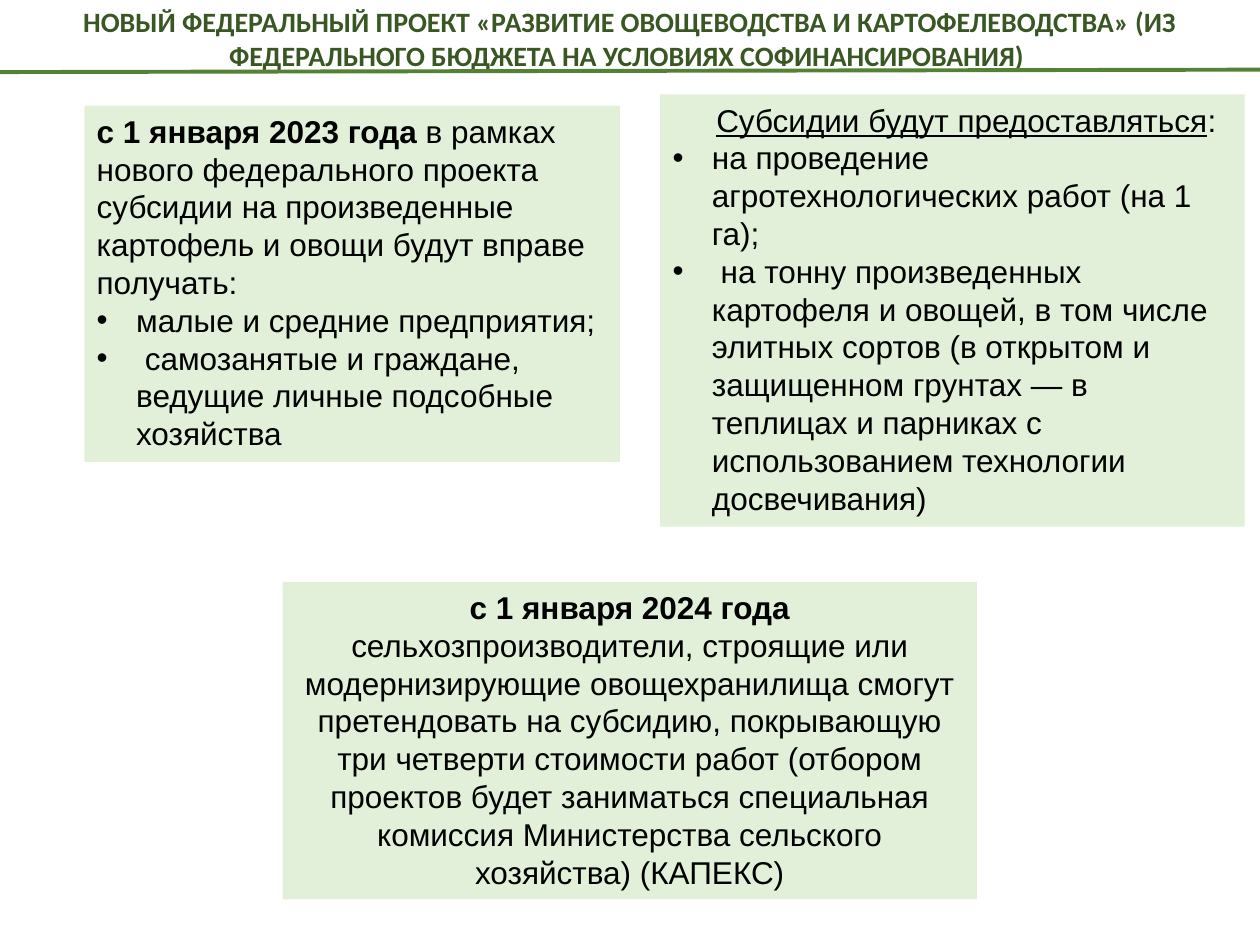
import pptx
import pptx.util
import pptx.dml.color
import pptx.enum.shapes
import pptx.enum.text
from lxml import etree

Pt = pptx.util.Pt
ALIGN = pptx.enum.text.PP_ALIGN
ANCHOR = pptx.enum.text.MSO_ANCHOR
COLORS = {"title": "385723", "rule": "548235", "panel": "E2F0D9", "text": "000000"}
HANG = 22.5


def color(name):
    return pptx.dml.color.RGBColor.from_string(COLORS[name])


def add_run(para, text, bold=False, under=False, size=18, face="Arial", tint="text"):
    run = para.add_run()
    run.text = text
    font = run.font
    font.name, font.size = face, Pt(size)
    font.bold, font.underline = bold, under
    font.color.rgb = color(tint)


def set_indent(para, left, first=0):
    props = para._p.get_or_add_pPr()
    props.set("marL", str(Pt(left)))
    props.set("indent", str(Pt(first)))
    return props


def add_bullet(frame, text):
    para = frame.add_paragraph()
    para.alignment = ALIGN.LEFT
    props = set_indent(para, HANG, -HANG)
    ns = pptx.oxml.ns.qn
    etree.SubElement(props, ns("a:buFont")).set("typeface", "Arial")
    etree.SubElement(props, ns("a:buChar")).set("char", "•")
    add_run(para, text)


def add_title(slide, text):
    box = slide.shapes.add_textbox(Pt(8), Pt(-1), Pt(704), Pt(46))
    frame = box.text_frame
    frame.word_wrap = True
    frame.vertical_anchor = ANCHOR.MIDDLE
    para = frame.paragraphs[0]
    para.alignment = ALIGN.CENTER
    add_run(para, text, bold=True, size=16, face="Calibri", tint="title")


def add_rule(slide):
    kind = pptx.enum.shapes.MSO_CONNECTOR.STRAIGHT
    rule = slide.shapes.add_connector(kind, Pt(720), Pt(39.8), Pt(0), Pt(41.2))
    rule.line.color.rgb = color("rule")
    rule.line.width = Pt(2.25)
    etree.SubElement(rule._element.spPr, pptx.oxml.ns.qn("a:effectLst"))


def add_panel(slide, left, top, width, height, align=ALIGN.LEFT):
    kind = pptx.enum.shapes.MSO_SHAPE.RECTANGLE
    panel = slide.shapes.add_shape(kind, Pt(left), Pt(top), Pt(width), Pt(height))
    panel.shadow.inherit = False
    panel.fill.solid()
    panel.fill.fore_color.rgb = color("panel")
    panel.line.fill.background()
    frame = panel.text_frame
    frame.word_wrap = True
    frame.vertical_anchor = ANCHOR.TOP
    frame.paragraphs[0].alignment = align
    return frame


def main():
    deck = pptx.Presentation()
    deck.slide_width, deck.slide_height = Pt(720), Pt(540)
    slide = deck.slides.add_slide(deck.slide_layouts[6])

    # Heading
    add_title(slide, "НОВЫЙ ФЕДЕРАЛЬНЫЙ ПРОЕКТ «РАЗВИТИЕ ОВОЩЕВОДСТВА И КАРТОФЕЛЕВОДСТВА» "
                     "(ИЗ ФЕДЕРАЛЬНОГО БЮДЖЕТА НА УСЛОВИЯХ СОФИНАНСИРОВАНИЯ) ")
    add_rule(slide)

    # Who may receive subsidies
    frame = add_panel(slide, 48.2, 60.3, 306, 203.6)
    para = frame.paragraphs[0]
    add_run(para, "с 1 января 2023 года ", bold=True)
    add_run(para, "в рамках нового федерального проекта субсидии на произведенные "
                  "картофель и овощи будут вправе получать:")
    add_bullet(frame, "малые и средние предприятия;")
    add_bullet(frame, " самозанятые и граждане, ведущие личные подсобные хозяйства")

    # What the subsidies cover
    frame = add_panel(slide, 377.2, 54, 334, 247)
    para = frame.paragraphs[0]
    set_indent(para, 25)
    add_run(para, "Субсидии будут предоставляться", under=True)
    add_run(para, ":")
    add_bullet(frame, "на проведение агротехнологических работ (на 1 га);")
    add_bullet(frame, " на тонну произведенных картофеля и овощей, в том числе элитных "
                      "сортов (в открытом и защищенном грунтах — в теплицах и парниках "
                      "с использованием технологии досвечивания)")

    # Storage support from 2024
    frame = add_panel(slide, 161.5, 332.5, 396.7, 181.5, ALIGN.CENTER)
    para = frame.paragraphs[0]
    add_run(para, "с 1 января 2024 года ", bold=True)
    add_run(para, "сельхозпроизводители, строящие или модернизирующие овощехранилища "
                  "смогут претендовать на субсидию, покрывающую три четверти стоимости "
                  "работ (отбором проектов будет заниматься специальная комиссия "
                  "Министерства сельского хозяйства) (КАПЕКС)")

    deck.save("out.pptx")


if __name__ == "__main__":
    main()
